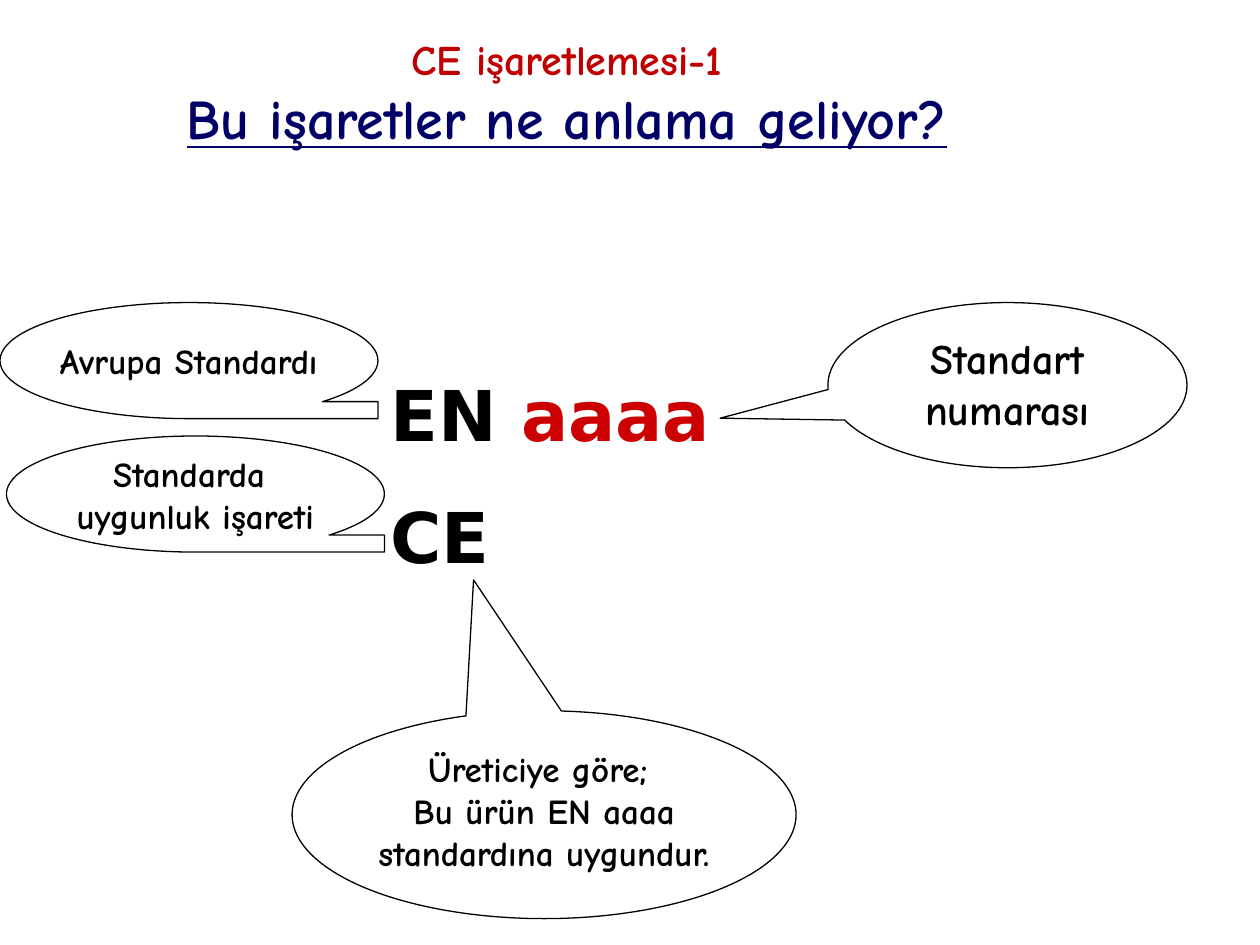
import pptx
import pptx.dml.color
import pptx.enum.shapes
import pptx.enum.text
import pptx.util

Cm, Pt = pptx.util.Cm, pptx.util.Pt
SHAPE = pptx.enum.shapes.MSO_SHAPE
ALIGN = pptx.enum.text.PP_ALIGN
ANCHOR = pptx.enum.text.MSO_ANCHOR

COLORS = {"heading": "C00000", "question": "000066", "number": "CC0000", "ink": "000000"}
HAND, PLAIN = "Comic Neue", "DejaVu Sans"
LINE_BREAK = "\n"


def span_format(size, color="ink", name=HAND, **extra):
    return {"size": Pt(size), "name": name, "bold": True, "color": color, **extra}


def set_all(target, values):
    for name, value in values.items():
        setattr(target, name, value)


def write(box, paragraphs, frame_format, para_format):
    """Fill a shape with paragraphs, each a list of (text, format) spans."""
    frame = box.text_frame
    set_all(frame, {"word_wrap": True, **frame_format})
    for index, spans in enumerate(paragraphs):
        para = frame.paragraphs[0] if index == 0 else frame.add_paragraph()
        set_all(para, para_format)
        for text, values in spans:
            if text == LINE_BREAK:
                para.add_line_break()
                continue
            span = para.add_run()
            span.text = text
            font_values = dict(values)
            color = COLORS[font_values.pop("color")]
            set_all(span.font, font_values)
            span.font.color.rgb = pptx.dml.color.RGBColor.from_string(color)


def add_title(page, left, top, width, height):
    box = page.shapes.add_textbox(Cm(left), Cm(top), Cm(width), Cm(height))
    spans = [
        ("CE işaretlemesi-1", span_format(24, "heading")),
        (LINE_BREAK, None),
        ("Bu işaretler ne anlama geliyor?", span_format(32, "question", underline=True)),
    ]
    write(box, [spans],
          {"vertical_anchor": ANCHOR.MIDDLE, "margin_bottom": Cm(1.4)},
          {"alignment": ALIGN.CENTER})


def add_marking(page, left, top, width, height):
    """The product marking that the balloons explain."""
    box = page.shapes.add_textbox(Cm(left), Cm(top), Cm(width), Cm(height))
    black = span_format(40, name=PLAIN)
    red = span_format(40, "number", name=PLAIN)
    write(box, [[("EN ", black), ("aaaa", red)], [("CE", black)]],
          {"margin_top": Cm(0.23)}, {"alignment": ALIGN.LEFT})
    box.text_frame.paragraphs[1].space_before = Pt(21.5)


def add_balloon(page, kind, left, top, width, height, lines, size,
                frame_format, pointer=()):
    box = page.shapes.add_shape(kind, Cm(left), Cm(top), Cm(width), Cm(height))
    for index, value in enumerate(pointer):
        box.adjustments[index] = value
    box.shadow.inherit = False
    box.fill.background()
    box.line.color.rgb = pptx.dml.color.RGBColor.from_string(COLORS["ink"])
    box.line.width = Pt(0.75)
    write(box, [[(line, span_format(size))] for line in lines],
          frame_format, {"alignment": ALIGN.CENTER})


def add_callout(page, left, top, width, height, lines, size, pointer):
    add_balloon(page, SHAPE.OVAL_CALLOUT, left, top, width, height, lines, size,
                {"vertical_anchor": ANCHOR.TOP}, pointer)


def add_label(page, left, top, width, height, lines):
    add_balloon(page, SHAPE.FLOWCHART_SEQUENTIAL_ACCESS_STORAGE,
                left, top, width, height, lines, 20,
                {"vertical_anchor": ANCHOR.MIDDLE, "word_wrap": False})


def main():
    deck = pptx.Presentation()
    deck.slide_width, deck.slide_height = Cm(25.4), Cm(19.05)
    page = deck.slides.add_slide(deck.slide_layouts[6])

    add_title(page, 0, 0.91, 22.86, 3.18)
    add_marking(page, 7.62, 7.26, 11.43, 4.52)
    add_callout(page, 16.69, 6.1, 7.24, 3.33, ["Standart numarası"], 24, (-0.8, 0.2))
    add_label(page, 0, 6.1, 7.62, 2.34, ["Avrupa Standardı"])
    add_label(page, 0.13, 8.79, 7.62, 2.34, ["Standarda ", "uygunluk işareti"])
    add_callout(page, 5.89, 14.33, 10.16, 4.19,
                ["Üreticiye göre; ", "Bu ürün EN aaaa standardına uygundur."],
                20, (-0.14, -1.13))

    deck.save("out.pptx")


if __name__ == "__main__":
    main()
